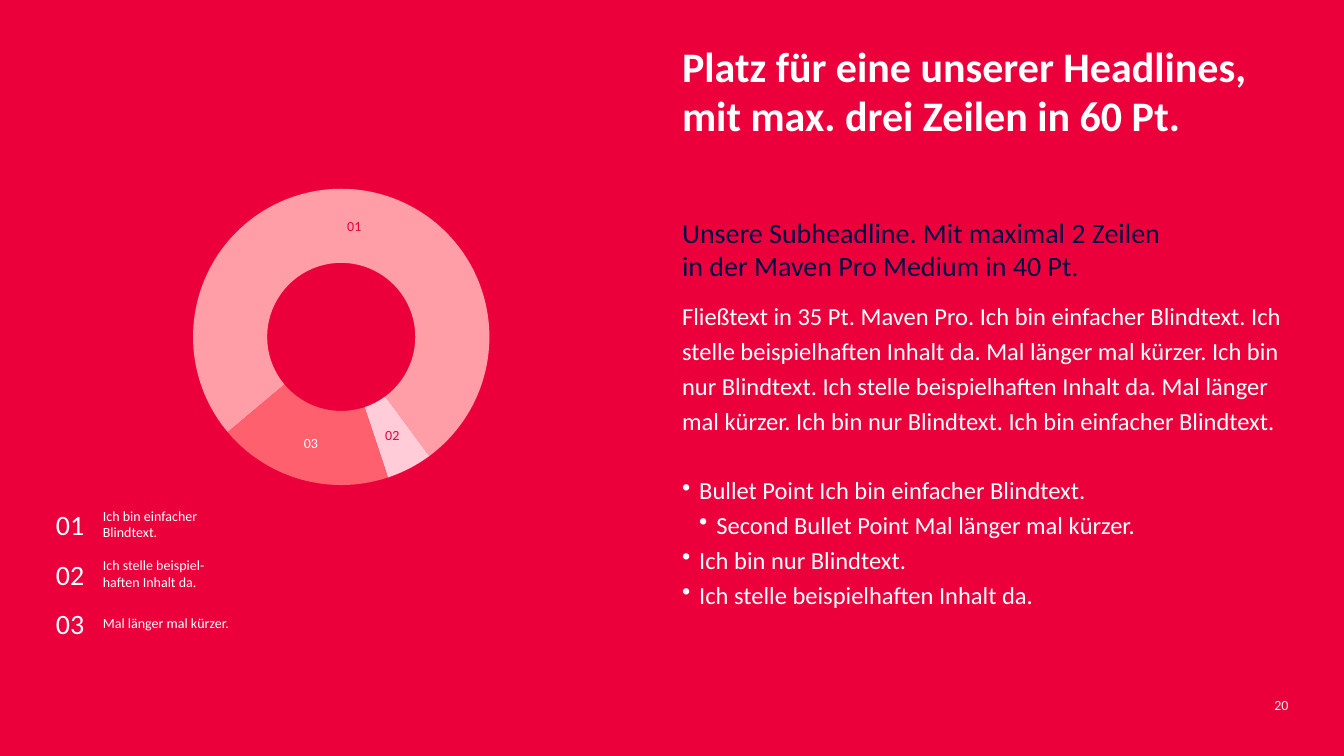
import pptx
import pptx.chart.data
import pptx.dml.color
import pptx.enum.chart
import pptx.enum.text
import pptx.oxml
import pptx.oxml.ns
import pptx.util
from pptx.util import Inches

RED = pptx.dml.color.RGBColor(0xEB, 0x00, 0x3C)
NAVY = pptx.dml.color.RGBColor(0x00, 0x05, 0x48)
WHITE = pptx.dml.color.RGBColor(0xFF, 0xFF, 0xFF)
PALE_GREY = pptx.dml.color.RGBColor(0xF0, 0xF0, 0xF0)
ROSE = pptx.dml.color.RGBColor(0xFF, 0x9E, 0xA7)
BLUSH = pptx.dml.color.RGBColor(0xFF, 0xCC, 0xD8)
CORAL = pptx.dml.color.RGBColor(0xFF, 0x60, 0x6E)

FONT = "Calibri"
BULLET_INDENT = 0.34
BODY_SPACING = 1.19

SHARES = [("01", 76, ROSE), ("02", 5, BLUSH), ("03", 19, CORAL)]
LEGEND = [
    ("01", "Ich bin einfacher Blindtext."),
    ("02", "Ich stelle beispiel-haften Inhalt da."),
    ("03", "Mal länger mal kürzer."),
]
BODY = (
    "Fließtext in 35 Pt. Maven Pro. Ich bin einfacher Blindtext. "
    "Ich stelle beispielhaften Inhalt da. Mal länger mal kürzer. "
    "Ich bin nur Blindtext. Ich stelle beispielhaften Inhalt da. "
    "Mal länger mal kürzer. Ich bin nur Blindtext. Ich bin einfacher Blindtext."
)
BULLETS = [
    (1, "Bullet Point Ich bin einfacher Blindtext."),
    (2, "Second Bullet Point Mal länger mal kürzer."),
    (1, "Ich bin nur Blindtext."),
    (1, "Ich stelle beispielhaften Inhalt da."),
]


def add_frame(slide, left, top, width, height, anchor=pptx.enum.text.MSO_ANCHOR.TOP):
    """Add a wrapping text box without margins and return its text frame."""
    box = slide.shapes.add_textbox(
        Inches(left), Inches(top), Inches(width), Inches(height))
    frame = box.text_frame
    frame.word_wrap = True
    frame.margin_left = frame.margin_right = 0
    frame.margin_top = frame.margin_bottom = 0
    frame.vertical_anchor = anchor
    return frame


def style_font(font, size, color, bold=False):
    font.name = FONT
    font.size = pptx.util.Pt(size)
    font.color.rgb = color
    font.bold = bold


def add_run(paragraph, text, size, color, bold=False):
    run = paragraph.add_run()
    run.text = text
    style_font(run.font, size, color, bold)


def set_bullet(paragraph, level):
    properties = paragraph._p.get_or_add_pPr()
    properties.set("marL", str(Inches(BULLET_INDENT * level)))
    properties.set("indent", str(-Inches(BULLET_INDENT)))
    bullet = properties.makeelement(pptx.oxml.ns.qn("a:buChar"), {"char": "•"})
    properties.append(bullet)


def add_headline(slide):
    headline = add_frame(slide, 13.53, 0.87, 12.03, 3).paragraphs[0]
    headline.line_spacing = 0.97
    add_run(headline,
            "Platz für eine unserer Headlines, mit max. drei Zeilen in 60 Pt.",
            60, WHITE, bold=True)


def add_body(slide):
    frame = add_frame(slide, 13.53, 4.27, 12.03, 9.14)
    subheadline = frame.paragraphs[0]
    subheadline.space_after = pptx.util.Pt(18)
    add_run(subheadline, "Unsere Subheadline. Mit maximal 2 Zeilen", 40, NAVY)
    subheadline.add_line_break()
    add_run(subheadline, "in der Maven Pro Medium in 40 Pt.", 40, NAVY)

    body = frame.add_paragraph()
    body.line_spacing = BODY_SPACING
    body.space_after = pptx.util.Pt(50)
    add_run(body, BODY, 35, WHITE)

    for level, text in BULLETS:
        item = frame.add_paragraph()
        set_bullet(item, level)
        item.line_spacing = BODY_SPACING
        add_run(item, text, 35, WHITE)


def place_plot(chart, x, y, width, height):
    """Fix the inner plot area, in fractions of the chart."""
    plot_area = chart._chartSpace.chart.plotArea
    for layout in plot_area.findall(pptx.oxml.ns.qn("c:layout")):
        plot_area.remove(layout)
    plot_area.insert(0, pptx.oxml.parse_xml(
        f'<c:layout {pptx.oxml.ns.nsdecls("c")}><c:manualLayout>'
        '<c:layoutTarget val="inner"/><c:xMode val="edge"/><c:yMode val="edge"/>'
        f'<c:x val="{x}"/><c:y val="{y}"/><c:w val="{width}"/><c:h val="{height}"/>'
        '</c:manualLayout></c:layout>'))


def add_doughnut(slide):
    data = pptx.chart.data.CategoryChartData()
    data.categories = [category for category, _, _ in SHARES]
    data.add_series("Series 1", [value for _, value, _ in SHARES])
    chart = slide.shapes.add_chart(
        pptx.enum.chart.XL_CHART_TYPE.DOUGHNUT,
        Inches(1.11), Inches(3.3), Inches(10.79), Inches(10.12), data).chart
    chart.has_title = False
    chart.has_legend = False
    style_font(chart.font, 10, WHITE)
    place_plot(chart, 0.252, 0.044, 0.545, 0.581)

    plot = chart.plots[0]
    plot.vary_by_categories = False
    doughnut = plot._element
    doughnut.find(pptx.oxml.ns.qn("c:firstSliceAng")).set("val", "230")
    doughnut.find(pptx.oxml.ns.qn("c:holeSize")).set("val", "54")

    series = plot.series[0]
    labels = series.data_labels
    labels.show_category_name = True
    labels.show_value = False
    labels.show_percentage = False
    style_font(labels.font, 20, RED)
    for index, (_, _, color) in enumerate(SHARES):
        slice_format = series.points[index].format
        slice_format.fill.solid()
        slice_format.fill.fore_color.rgb = color
        slice_format.line.fill.background()

    style_font(series.points[2].data_label.font, 20, WHITE)
    coral_label = labels._element.find(pptx.oxml.ns.qn("c:dLbl"))
    for tag, shown in (("c:showVal", "0"), ("c:showCatName", "1")):
        coral_label.find(pptx.oxml.ns.qn(tag)).set("val", shown)


def add_legend(slide):
    middle = pptx.enum.text.MSO_ANCHOR.MIDDLE
    for row, (number, text) in enumerate(LEGEND):
        top = 10.04 + 0.98 * row
        key = add_frame(slide, 1.11, top, 0.79, 0.63, middle).paragraphs[0]
        key.line_spacing = 1.17
        add_run(key, number, 40, WHITE)
        entry = add_frame(slide, 2.04, top, 2.6, 0.71, middle).paragraphs[0]
        add_run(entry, text, 20, WHITE)


def add_page_number(slide):
    page = add_frame(slide, 24.38, 13.81, 1.18, 0.47).paragraphs[0]
    page.alignment = pptx.enum.text.PP_ALIGN.RIGHT
    add_run(page, "20", 20, PALE_GREY)


def main():
    presentation = pptx.Presentation()
    presentation.slide_width = Inches(26.66)
    presentation.slide_height = Inches(15)
    slide = presentation.slides.add_slide(presentation.slide_layouts[6])
    slide.background.fill.solid()
    slide.background.fill.fore_color.rgb = RED

    add_page_number(slide)
    add_body(slide)
    add_headline(slide)
    add_doughnut(slide)
    add_legend(slide)
    presentation.save("out.pptx")


if __name__ == "__main__":
    main()
